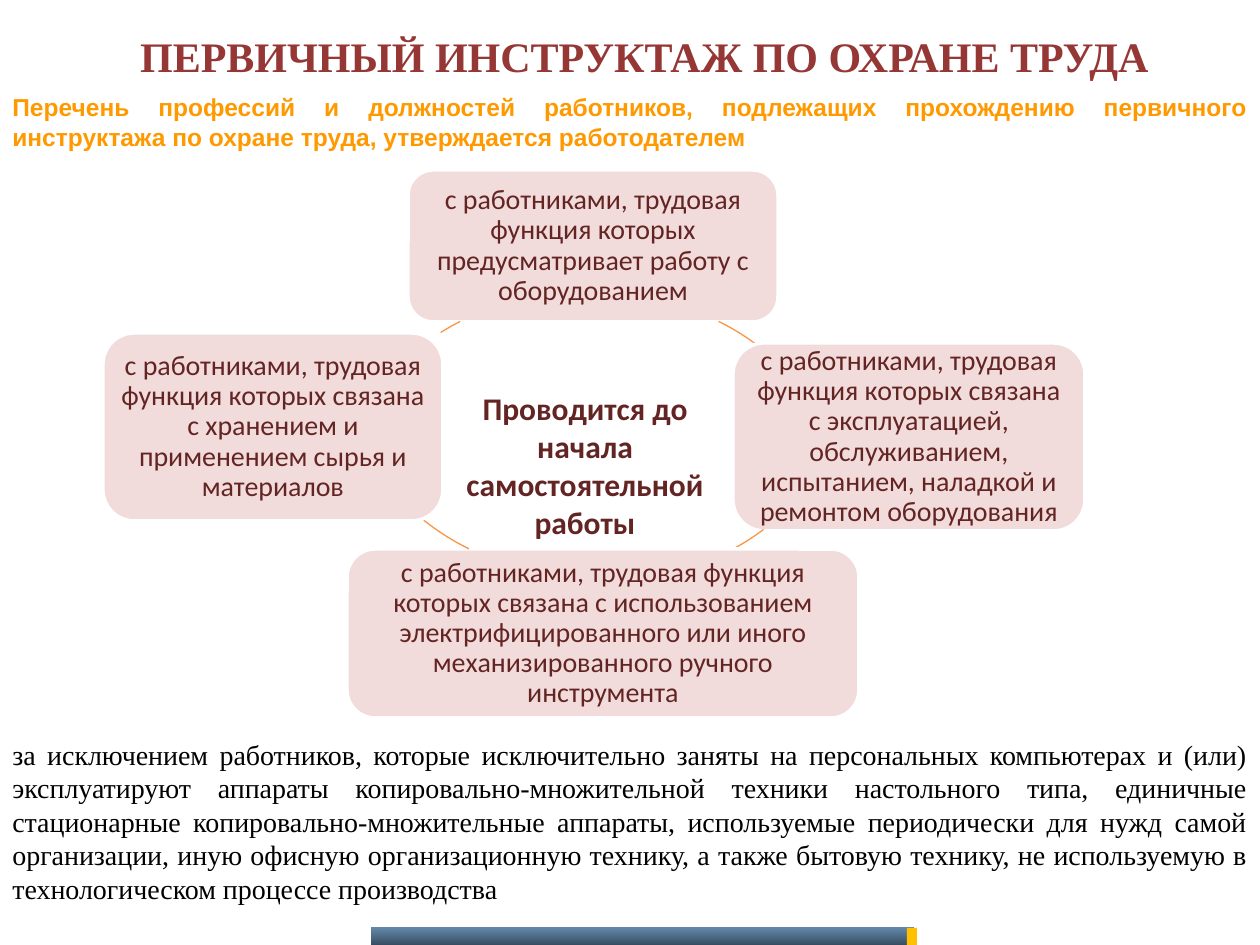
from math import atan2, degrees

from lxml.etree import SubElement
from pptx import Presentation
from pptx.dml.color import RGBColor
from pptx.enum.shapes import MSO_SHAPE
from pptx.enum.text import MSO_ANCHOR, PP_ALIGN
from pptx.oxml.ns import qn
from pptx.util import Pt

EMU_PER_PX = 914400 / 126
MAROON = "632523"
ARC_DIAMETER = 480

# Left, top, width, height and wording of each card
CARDS = [
    (408, 170, 370, 152, "с работниками, трудовая функция которых предусматривает работу с оборудованием"),
    (733, 343, 352, 188, "с работниками, трудовая функция которых связана с эксплуатацией, "
                         "обслуживанием, испытанием, наладкой и ремонтом оборудования"),
    (347, 549, 512, 169, "с работниками, трудовая функция которых связана с использованием "
                         "электрифицированного или иного механизированного ручного инструмента"),
    (103, 333, 340, 188, "с работниками, трудовая функция которых связана с хранением "
                         "и применением сырья и материалов"),
]
# Circle corner, then clockwise start and end points of the visible arc
ARCS = [
    ((373, 297), (719, 321), (755, 343)),
    ((379, 98), (764, 530), (735, 549)),
    ((334, 93), (469, 549), (423, 520)),
    ((328, 296), (441, 333), (460, 321)),
]
CENTRE = "Проводится до начала самостоятельной работы"
LEAD = ("Перечень профессий и должностей работников, подлежащих прохождению первичного "
        "инструктажа по охране труда, утверждается работодателем")
EXCEPTION = (
    "за исключением работников, которые исключительно заняты на персональных компьютерах и (или) "
    "эксплуатируют аппараты копировально-множительной техники настольного типа, единичные "
    "стационарные копировально-множительные аппараты, используемые периодически для нужд самой "
    "организации, иную офисную организационную технику, а также бытовую технику, не используемую "
    "в технологическом процессе производства")


def px(value):
    return round(value * EMU_PER_PX)


def color(value):
    return RGBColor.from_string(value)


def write(shape, text, size, font, fill, bold=False, align=PP_ALIGN.CENTER,
          anchor=MSO_ANCHOR.TOP):
    frame = shape.text_frame
    frame.word_wrap = True
    frame.vertical_anchor = anchor
    paragraph = frame.paragraphs[0]
    paragraph.alignment = align
    run = paragraph.add_run()
    run.text = text
    run.font.size = Pt(size)
    run.font.name = font
    run.font.bold = bold
    run.font.color.rgb = color(fill)
    return frame


def add_title(slide, text):
    title = slide.shapes.title
    title.left, title.top, title.width, title.height = (px(v) for v in (54, 26, 1181, 60))
    write(title, text, 24, "Times New Roman", "953735", True, anchor=MSO_ANCHOR.MIDDLE)


def add_text(slide, box, *style, **options):
    write(slide.shapes.add_textbox(*(px(v) for v in box)), *style, **options)


def add_shape(slide, kind, box):
    shape = slide.shapes.add_shape(kind, *(px(v) for v in box))
    shape.shadow.inherit = False
    return shape


def add_bar(slide, box):
    bar = add_shape(slide, MSO_SHAPE.RECTANGLE, box)
    bar.line.fill.background()
    return bar


def add_footer(slide):
    band = add_bar(slide, (372, 928, 542, 17))
    band.fill.gradient()
    band.fill.gradient_angle = 270
    for stop, (tone, opacity) in zip(band.fill.gradient_stops, (("003C73", 60), ("001C35", 80))):
        stop.color.rgb = color(tone)
        tone_element = band._element.find(f".//{qn('a:srgbClr')}[@val='{tone}']")
        SubElement(tone_element, qn("a:alpha"), val=str(opacity * 1000))
    accent = add_bar(slide, (907, 928, 10, 17))
    accent.fill.solid()
    accent.fill.fore_color.rgb = color("FFC000")


def add_card(slide, box, text):
    card = add_shape(slide, MSO_SHAPE.ROUNDED_RECTANGLE, box)
    card.fill.solid()
    card.fill.fore_color.rgb = color("F2DCDB")
    card.line.color.rgb = color("FFFFFF")
    card.line.width = Pt(2)
    frame = write(card, text, 16, "Calibri", MAROON, anchor=MSO_ANCHOR.MIDDLE)
    frame.margin_left = frame.margin_right = frame.margin_top = frame.margin_bottom = px(9)
    frame.paragraphs[0].line_spacing = 0.9


def add_arc(slide, corner, *ends):
    arc = add_shape(slide, MSO_SHAPE.ARC, (*corner, ARC_DIAMETER, ARC_DIAMETER))
    centre_x, centre_y = (v + ARC_DIAMETER / 2 for v in corner)
    for index, (x, y) in enumerate(ends):
        angle = degrees(atan2(y - centre_y, x - centre_x)) % 360
        arc.adjustments[index] = angle * 0.6  # 60000 units per degree, stored over 100000
    arc.fill.background()
    arc.line.color.rgb = color("F79646")
    arc.line.width = Pt(0.75)


def main():
    presentation = Presentation()
    presentation.slide_width, presentation.slide_height = px(1260), px(945)
    slide = presentation.slides.add_slide(presentation.slide_layouts[5])

    # Footer and title
    add_footer(slide)
    add_title(slide, "ПЕРВИЧНЫЙ ИНСТРУКТАЖ ПО ОХРАНЕ ТРУДА")

    # Cycle of cards joined by arcs
    for (*box, text), arc in zip(CARDS, ARCS):
        add_card(slide, box, text)
        add_arc(slide, *arc)

    # Text in the centre, above and below the cycle
    add_text(slide, (451, 383, 268, 165), CENTRE, 18, "Calibri", MAROON, True)
    add_text(slide, (0, 86, 1260, 72), LEAD, 14, "Arial", "FF9900", True, PP_ALIGN.JUSTIFY)
    add_text(slide, (0, 731, 1260, 183), EXCEPTION, 16, "Times New Roman", "000000",
             align=PP_ALIGN.JUSTIFY)

    presentation.save("out.pptx")


if __name__ == "__main__":
    main()
